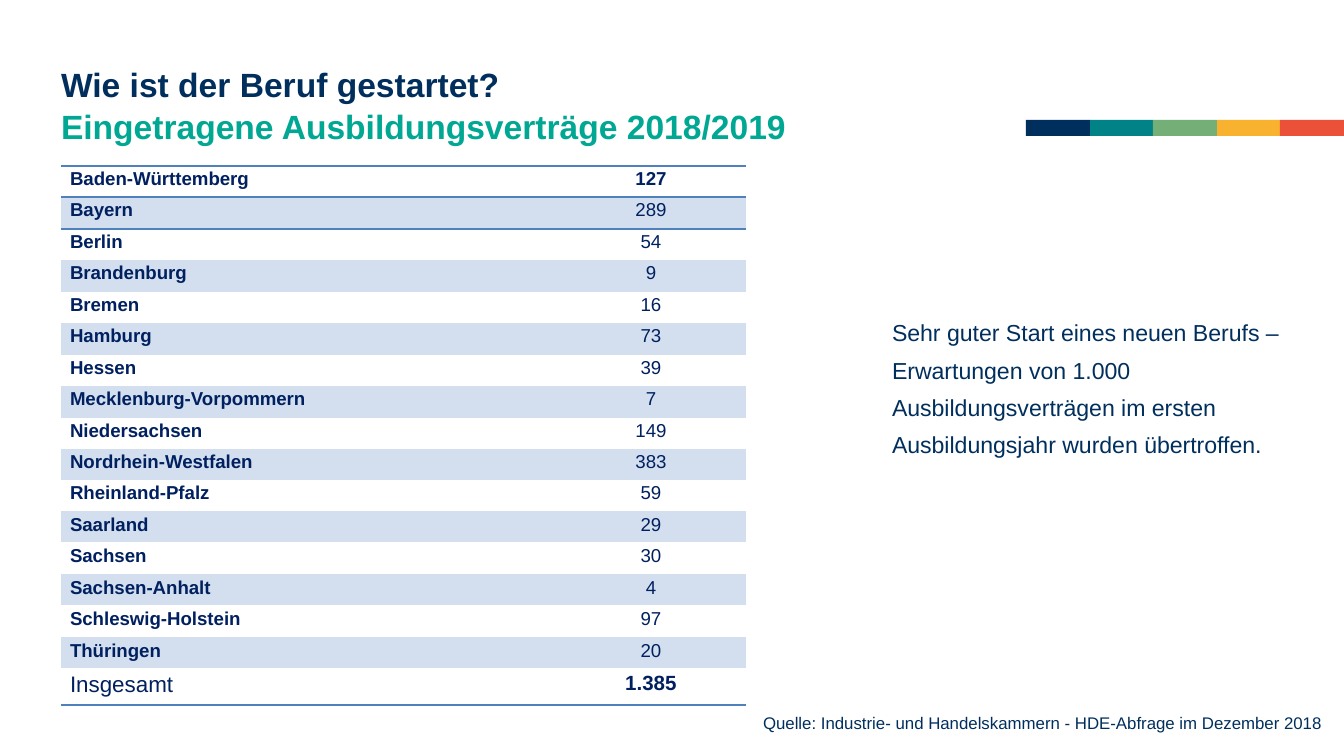
"""Build the slide on newly registered training contracts by federal state."""
import dataclasses
import itertools

import lxml.etree
import pptx
import pptx.dml.color
import pptx.enum.shapes
import pptx.enum.text
import pptx.oxml.ns
import pptx.util

EMU_PER_PX = 914400 / 134.4
SLIDE_WIDTH, SLIDE_HEIGHT = 1344, 756
NO_GRID_STYLE = "{2D5ABB26-0587-4C30-8999-92F81FD0307C}"
ALIGN = pptx.enum.text.PP_ALIGN
TOP = pptx.enum.text.MSO_ANCHOR.TOP

CONTRACTS = [
    ("Baden-Württemberg", "127"),
    ("Bayern", "289"),
    ("Berlin", "54"),
    ("Brandenburg", "9"),
    ("Bremen", "16"),
    ("Hamburg", "73"),
    ("Hessen", "39"),
    ("Mecklenburg-Vorpommern", "7"),
    ("Niedersachsen", "149"),
    ("Nordrhein-Westfalen", "383"),
    ("Rheinland-Pfalz", "59"),
    ("Saarland", "29"),
    ("Sachsen", "30"),
    ("Sachsen-Anhalt", "4"),
    ("Schleswig-Holstein", "97"),
    ("Thüringen", "20"),
    ("Insgesamt", "1.385"),
]


@dataclasses.dataclass(frozen=True)
class Theme:
    font: str = "Arial"
    navy: str = "002F5D"
    green: str = "00A893"
    table_text: str = "002060"
    band: str = "D3DFEE"
    rule: str = "4F81BD"
    white: str = "FFFFFF"
    stripes: tuple = ("002F5D", "008286", "74AF78", "F9B22F", "EA5138")
    title_size: float = 18
    callout_size: float = 12.4
    table_size: float = 10
    total_label_size: float = 12
    total_value_size: float = 11
    source_size: float = 9


def px(length):
    return pptx.util.Emu(round(length * EMU_PER_PX))


def rgb(color):
    return pptx.dml.color.RGBColor.from_string(color)


class SlideBuilder:
    def __init__(self, slide, theme):
        self.slide = slide
        self.theme = theme

    def format(self, paragraph, size, color, bold=False, align=ALIGN.LEFT, spacing=None):
        paragraph.alignment = align
        paragraph.line_spacing = spacing
        font = paragraph.font
        font.name, font.size, font.bold = self.theme.font, pptx.util.Pt(size), bold
        font.color.rgb = rgb(color)

    def frame(self, shape, lines, left, top, right, bottom):
        frame = shape.text_frame
        frame.text = "\n".join(lines)
        frame.word_wrap = True
        frame.auto_size = pptx.enum.text.MSO_AUTO_SIZE.NONE
        frame.vertical_anchor = TOP
        frame.margin_left, frame.margin_top = px(left), px(top)
        frame.margin_right, frame.margin_bottom = px(right), px(bottom)
        return frame.paragraphs

    def rectangle(self, left, top, width, height, color):
        shape = self.slide.shapes.add_shape(
            pptx.enum.shapes.MSO_SHAPE.RECTANGLE, px(left), px(top), px(width), px(height))
        shape.shadow.inherit = False
        shape.fill.solid()
        shape.fill.fore_color.rgb = rgb(color)
        shape.line.fill.background()
        return shape

    def stripes(self, left, top, height):
        colors = self.theme.stripes
        edges = [left + round((SLIDE_WIDTH - left) * i / len(colors))
                 for i in range(len(colors) + 1)]
        for color, (start, end) in zip(colors, itertools.pairwise(edges)):
            self.rectangle(start, top, end - start, height, color)

    def title(self, left, top, width, height, lines):
        title = self.slide.shapes.title
        title.left, title.top, title.width, title.height = map(px, (left, top, width, height))
        colors = (self.theme.navy, self.theme.green)
        for paragraph, color in zip(self.frame(title, lines, 0, 0, 0, 0), colors):
            self.format(paragraph, self.theme.title_size, color, bold=True, spacing=1.04)

    def callout(self, left, top, width, height, lines):
        shape = self.rectangle(left, top, width, height, self.theme.white)
        for paragraph in self.frame(shape, lines, 13, 27, 13, 0):
            paragraph.level = 1
            properties = paragraph._p.get_or_add_pPr()
            properties.set("marL", str(px(27)))
            properties.set("indent", "0")
            self.format(paragraph, self.theme.callout_size, self.theme.navy, spacing=1.35)

    def source(self, left, top, width, height, line):
        box = self.slide.shapes.add_textbox(px(left), px(top), px(width), px(height))
        paragraph, = self.frame(box, [line], 13, 7, 13, 7)
        self.format(paragraph, self.theme.source_size, self.theme.navy)

    def border(self, cell, side):
        qn = pptx.oxml.ns.qn
        line = lxml.etree.SubElement(
            cell._tc.get_or_add_tcPr(), qn(f"a:ln{side}"), w=str(pptx.util.Pt(1)))
        fill = lxml.etree.SubElement(line, qn("a:solidFill"))
        lxml.etree.SubElement(fill, qn("a:srgbClr"), val=self.theme.rule)

    def cell(self, cell, text, banded, sides, **style):
        cell.text = text
        cell.vertical_anchor = TOP
        cell.margin_left = cell.margin_right = px(9)
        cell.margin_top = cell.margin_bottom = 0
        for side in sides:
            self.border(cell, side)
        if banded:
            cell.fill.solid()
            cell.fill.fore_color.rgb = rgb(self.theme.band)
        else:
            cell.fill.background()
        self.format(cell.text_frame.paragraphs[0], color=self.theme.table_text,
                    spacing=1.15, **style)

    def table(self, left, top, column_widths, states_height, total_height, rows):
        theme, last = self.theme, len(rows) - 1
        graphic = self.slide.shapes.add_table(
            len(rows), len(column_widths), px(left), px(top),
            px(sum(column_widths)), px(states_height + total_height))
        table = graphic.table
        table.first_row = table.horz_banding = False
        table._tbl.tblPr.find(pptx.oxml.ns.qn("a:tableStyleId")).text = NO_GRID_STYLE
        for column, width in zip(table.columns, column_widths):
            column.width = px(width)
        edges = [round(states_height * i / last) for i in range(last + 1)]
        edges.append(states_height + total_height)
        borders = {0: "TB", 1: "T", last: "B"}
        for index, (state, count) in enumerate(rows):
            table.rows[index].height = px(edges[index + 1] - edges[index])
            total = index == last
            shared = (index % 2 == 1, borders.get(index, ""))
            self.cell(table.cell(index, 0), state, *shared, bold=not total,
                      size=theme.total_label_size if total else theme.table_size)
            self.cell(table.cell(index, 1), count, *shared, bold=index in (0, last),
                      size=theme.total_value_size if total else theme.table_size,
                      align=ALIGN.CENTER)


def main():
    presentation = pptx.Presentation()
    presentation.slide_width, presentation.slide_height = px(SLIDE_WIDTH), px(SLIDE_HEIGHT)
    slide = presentation.slides.add_slide(presentation.slide_layouts[5])
    builder = SlideBuilder(slide, Theme())
    builder.stripes(1026, 120, 16)
    builder.title(61, 62, 972, 169, [
        "Wie ist der Beruf gestartet?", "Eingetragene Ausbildungsverträge 2018/2019"])
    builder.table(61, 166, (495, 190), 503, 37, CONTRACTS)
    builder.source(750, 706, 595, 34,
                   "Quelle: Industrie- und Handelskammern - HDE-Abfrage im Dezember 2018")
    builder.callout(852, 282, 448, 269, [
        "Sehr guter Start eines neuen Berufs –",
        "Erwartungen von 1.000 Ausbildungsverträgen im ersten "
        "Ausbildungsjahr wurden übertroffen."])
    presentation.save("out.pptx")


if __name__ == "__main__":
    main()
